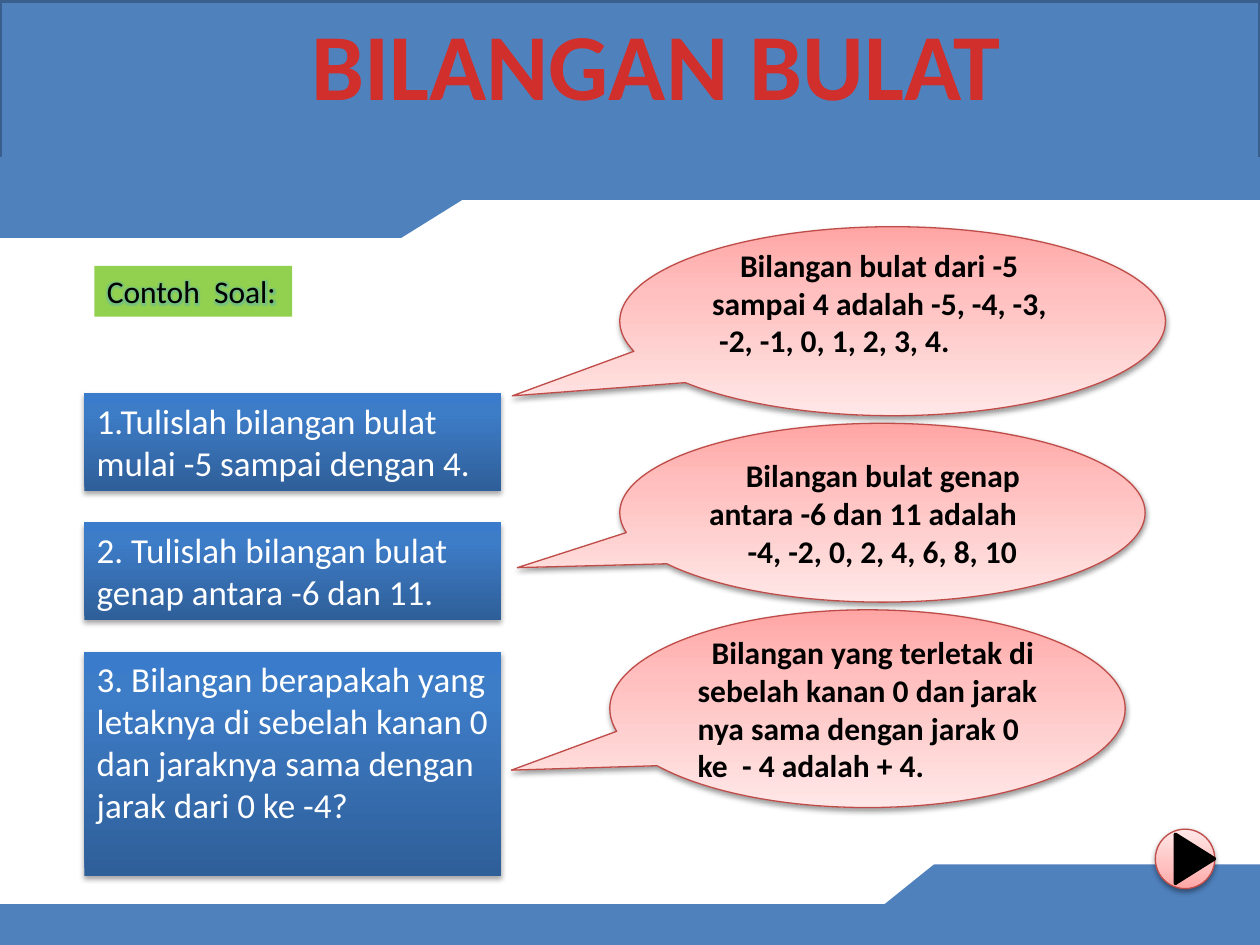
from lxml import etree
from pptx import Presentation
from pptx.dml.color import RGBColor
from pptx.enum.shapes import MSO_SHAPE
from pptx.enum.text import MSO_ANCHOR, PP_ALIGN
from pptx.oxml import parse_xml
from pptx.oxml.ns import nsdecls, qn
from pptx.util import Pt

RECT, OVAL = MSO_SHAPE.RECTANGLE, MSO_SHAPE.OVAL
TRIANGLE, CALLOUT = MSO_SHAPE.ISOSCELES_TRIANGLE, MSO_SHAPE.OVAL_CALLOUT
TOP, MIDDLE = MSO_ANCHOR.TOP, MSO_ANCHOR.MIDDLE
LEFT, CENTER = PP_ALIGN.LEFT, PP_ALIGN.CENTER

BLUE = RGBColor(0x4F, 0x81, 0xBD)
NAVY = RGBColor(0x3A, 0x5F, 0x8C)
GREEN = RGBColor(0x92, 0xD0, 0x50)
TEAL = RGBColor(0x4B, 0xAC, 0xC6)
RED = RGBColor(0xD0, 0x2F, 0x2C)
ROSE = RGBColor(0xBF, 0x4C, 0x48)
BLACK = RGBColor(0, 0, 0)
WHITE = RGBColor(0xFF, 0xFF, 0xFF)
PANEL_STOPS = [(0, RGBColor(0x2F, 0x5F, 0x99)), (80, RGBColor(0x3D, 0x7C, 0xC7)),
               (100, RGBColor(0x3A, 0x7C, 0xCB))]
PINK_STOPS = [(0, RGBColor(0xFF, 0xA6, 0xA5)), (35, RGBColor(0xFF, 0xC0, 0xBF)),
              (100, RGBColor(0xFF, 0xE7, 0xE7))]

QUESTIONS = [
    (55.7, ["1.Tulislah bilangan bulat mulai -5 sampai dengan 4."]),
    (55.7, ["2. Tulislah bilangan bulat genap antara -6 dan 11."]),
    (128.2, ["3. Bilangan berapakah yang letaknya di sebelah kanan 0",
             "dan jaraknya sama dengan jarak dari 0 ke -4?"]),
]
ANSWERS = [
    ((354.2, 129.6, 311.8, 108), (-0.697, 0.395), 25,
     [(16, "Bilangan bulat dari -5\vsampai 4 adalah -5, -4, -3,\v -2, -1, 0, 1, 2, 3, 4.")]),
    ((348.5, 348.5, 294.5, 113), (-0.691, 0.311), 3.6,
     [(8, "Bilangan yang terletak di"),
      (0, "sebelah kanan 0 dan jarak\vnya sama dengan jarak 0\vke  - 4 adalah + 4.")]),
    ((354.2, 241.9, 300.2, 102.2), (-0.695, 0.307), 3.6,
     [(21, "Bilangan bulat genap\vantara -6 dan 11 adalah"),
      (22, "-4, -2, 0, 2, 4, 6, 8, 10")]),
]


def style(sp, fill, line=None, width=0.75):
    """Give a shape a plain fill and line without shadow."""
    sp.shadow.inherit = False
    sp.fill.solid()
    sp.fill.fore_color.rgb = fill
    if line is None:
        sp.line.fill.background()
    else:
        sp.line.color.rgb = line
        sp.line.width = Pt(width)


def add_shape(s, kind, box, fill, line=None, width=0.75):
    """Add a styled preset shape."""
    sp = s.shapes.add_shape(kind, *map(Pt, box))
    style(sp, fill, line, width)
    return sp


def add_polygon(s, points):
    """Add a closed blue outline through the points."""
    points = [(Pt(x), Pt(y)) for x, y in points]
    builder = s.shapes.build_freeform(*points[0])
    builder.add_line_segments(points[1:], close=True)
    style(builder.convert_to_shape(), BLUE, BLUE, 2)


def add_gradient(sp, stops, angle):
    """Replace the fill by a linear gradient."""
    items = "".join(f'<a:gs pos="{pos * 1000}"><a:srgbClr val="{color}"/></a:gs>'
                    for pos, color in stops)
    grad = parse_xml(f'<a:gradFill {nsdecls("a")} rotWithShape="1"><a:gsLst>{items}</a:gsLst>'
                     f'<a:lin ang="{angle * 60000}" scaled="0"/></a:gradFill>')
    props = sp.element.spPr
    props.replace(props.find(qn("a:solidFill")), grad)


def add_shadow(sp, alpha, distance):
    """Add a soft black shadow below a shape."""
    effects = sp.element.spPr.find(qn("a:effectLst"))
    shadow = etree.SubElement(effects, qn("a:outerShdw"), blurRad=str(Pt(3.1)),
                              dist=str(Pt(distance)), dir="5400000", rotWithShape="0")
    color = etree.SubElement(shadow, qn("a:srgbClr"), val=str(BLACK))
    etree.SubElement(color, qn("a:alpha"), val=str(alpha * 1000))


def add_text(sp, lines, size, color, bold=False, align=LEFT, anchor=TOP, **margins):
    """Write (first-line indent, text) paragraphs into a shape."""
    tf = sp.text_frame
    frame = {"word_wrap": True, "vertical_anchor": anchor}
    frame.update({f"margin_{side}": Pt(value) for side, value in margins.items()})
    for name, value in frame.items():
        setattr(tf, name, value)
    for i, (indent, text) in enumerate(lines):
        p = tf.paragraphs[0] if i == 0 else tf.add_paragraph()
        p.text = text
        p.alignment = align
        if indent:
            p._p.get_or_add_pPr().set("indent", str(Pt(indent)))
        for r in p.runs:
            for name, value in {"name": "Calibri", "size": Pt(size), "bold": bold}.items():
                setattr(r.font, name, value)
            r.font.color.rgb = color


def add_glow(r, color):
    """Put a glow around the letters of a run."""
    glow = parse_xml(f'<a:effectLst {nsdecls("a")}><a:glow rad="{Pt(5)}"><a:srgbClr val="{color}">'
                     '<a:alpha val="40000"/></a:srgbClr></a:glow></a:effectLst>')
    r._r.rPr.find(qn("a:solidFill")).addnext(glow)


def add_footer(s, x, y, w, h):
    """Draw the stepped band at the bottom."""
    step = h / 2
    add_shape(s, RECT, (x, y + step, w, step), BLUE, BLUE, 2)
    add_polygon(s, [(x + 534, y), (x + w, y), (x + w, y + step), (x + 506, y + step)])


def add_header(s, x, y, w, h):
    """Draw the stepped band at the top with the title."""
    add_shape(s, RECT, (x, y + 0.7, w, 90), BLUE, NAVY, 2)
    step = y + 113.5
    add_polygon(s, [(x, step), (x + 263.5, step), (x + 229, y + h), (x, y + h)])
    add_polygon(s, [(x, y + 90.7), (x + w, y + 90.7), (x + w, step), (x, step)])
    title = s.shapes.add_textbox(Pt(x + 168.5), Pt(y), Pt(413.3), Pt(72.7))
    add_text(title, [(0, "BILANGAN BULAT")], 54, RED, True, CENTER)


def add_questions(s, x, y, w):
    """Stack the heading tag and the question panels."""
    tag = add_shape(s, RECT, (x + 5.8, y, 113, 29), GREEN)
    add_text(tag, [(0, "Contoh  Soal:")], 18, BLACK)
    add_glow(tag.text_frame.paragraphs[0].runs[0], TEAL)
    top = y + 72.7
    for height, texts in QUESTIONS:
        sp = add_shape(s, RECT, (x, top, w, height), WHITE)
        add_gradient(sp, PANEL_STOPS, 270)
        add_shadow(sp, 35, 1.8)
        add_text(sp, [(0, text) for text in texts], 20, WHITE, right=4)
        top += height + 18.1


def add_answer(s, box, tail, bottom, lines):
    """Draw one speech bubble with its answer."""
    sp = add_shape(s, CALLOUT, box, WHITE, ROSE)
    sp.adjustments[0], sp.adjustments[1] = tail
    add_gradient(sp, PINK_STOPS, 90)
    add_shadow(sp, 38, 1.6)
    add_text(sp, lines, 18, BLACK, True, anchor=MIDDLE, right=0, bottom=bottom)


def add_next_button(s, x, y, size):
    """Draw the round button with its play triangle."""
    disc = add_shape(s, OVAL, (x, y, size, size), WHITE, ROSE)
    add_gradient(disc, PINK_STOPS, 270)
    add_shadow(disc, 38, 1.6)
    arrow = add_shape(s, TRIANGLE, (x + 8.6, y + 5.8, 28, 22.3), BLACK, BLACK, 2)
    arrow.rotation = 90


def main():
    """Build the slide and save it."""
    prs = Presentation()
    prs.slide_width, prs.slide_height = Pt(720), Pt(540)
    s = prs.slides.add_slide(prs.slide_layouts[6])
    add_footer(s, 0, 495, 720, 45)
    add_header(s, 0, 0, 720, 135)
    add_questions(s, 48.2, 152, 238.3)
    for answer in ANSWERS:
        add_answer(s, *answer)
    add_next_button(s, 660.2, 473.8, 34)
    prs.save("out.pptx")


if __name__ == "__main__":
    main()
